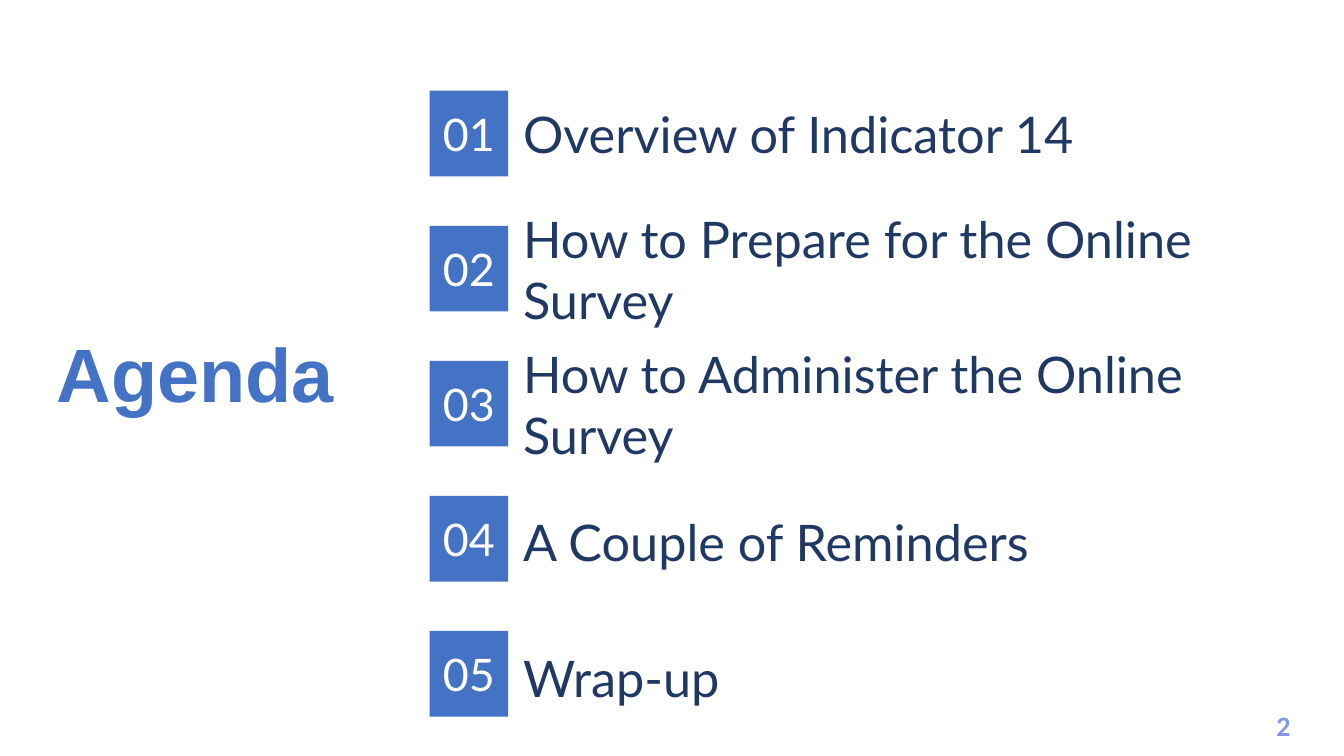
from dataclasses import dataclass

from pptx import Presentation
from pptx.dml.color import RGBColor
from pptx.enum.shapes import MSO_SHAPE
from pptx.enum.text import MSO_ANCHOR, PP_ALIGN
from pptx.util import Emu, Pt

RECTANGLE = MSO_SHAPE.RECTANGLE
MIDDLE, TOP = MSO_ANCHOR.MIDDLE, MSO_ANCHOR.TOP
LEFT, CENTER = PP_ALIGN.LEFT, PP_ALIGN.CENTER
TITLE_ONLY = 5
EMU_PER_PX = 9144  # 100 px to the inch


@dataclass(frozen=True)
class Theme:
    accent: str = "4472C4"
    topic: str = "203864"
    light: str = "FFFFFF"
    page: str = "8397E7"
    title_font: str = "Arial"
    body_font: str = "Lato"
    page_font: str = "Calibri"
    title_size: int = 54
    number_size: int = 32
    topic_size: int = 36
    page_size: int = 20


THEME = Theme()

# Each topic with the px its text sits below the middle of its number
TOPICS = [
    ("Overview of Indicator 14", 0),
    ("How to Prepare for the Online Survey", 0),
    ("How to Administer the Online Survey", 0),
    ("A Couple of Reminders", 3),
    ("Wrap-up", 3),
]


def px(length):
    return Emu(length * EMU_PER_PX)


def write(shape, text, font, size, color, align=LEFT, anchor=MIDDLE, bold=False):
    frame = shape.text_frame
    frame.text = text
    frame.word_wrap = True
    frame.vertical_anchor = anchor
    paragraph = frame.paragraphs[0]
    paragraph.alignment = align
    paragraph.font.name = font
    paragraph.font.size = Pt(size)
    paragraph.font.bold = bold
    paragraph.font.color.rgb = RGBColor.from_string(color)
    return paragraph


def add_title(slide, left, top, width, height):
    title = slide.shapes.title
    title.left, title.top = px(left), px(top)
    title.width, title.height = px(width), px(height)
    paragraph = write(title, "Agenda", THEME.title_font, THEME.title_size,
                      THEME.accent, bold=True)
    paragraph.line_spacing = 0.9


def add_agenda_row(slide, number, topic, drop, left, top, width, height):
    number_width, gap = 78, 5
    square = slide.shapes.add_shape(RECTANGLE, px(left), px(top),
                                    px(number_width), px(height))
    square.shadow.inherit = False
    square.fill.solid()
    square.fill.fore_color.rgb = RGBColor.from_string(THEME.accent)
    square.line.fill.background()
    write(square, f"{number:02}", THEME.body_font, THEME.number_size,
          THEME.light, CENTER)

    indent = number_width + gap
    label = slide.shapes.add_textbox(px(left + indent), px(top + drop),
                                     px(width - indent), px(height))
    write(label, topic, THEME.body_font, THEME.topic_size, THEME.topic)


def add_agenda(slide, left, top, width, height):
    row_height = 85
    pitch = (height - row_height) // (len(TOPICS) - 1)
    for index, (topic, drop) in enumerate(TOPICS):
        add_agenda_row(slide, index + 1, topic, drop,
                       left, top + index * pitch, width, row_height)


def add_page_number(slide, left, top, width, height):
    box = slide.shapes.add_textbox(px(left), px(top), px(width), px(height))
    write(box, "2", THEME.page_font, THEME.page_size, THEME.page,
          CENTER, TOP, bold=True)


def main():
    presentation = Presentation()
    presentation.slide_width, presentation.slide_height = px(1333), px(750)
    slide = presentation.slides.add_slide(presentation.slide_layouts[TITLE_ONLY])
    add_page_number(slide, 1242, 698, 62, 44)
    add_title(slide, 46, 318, 307, 114)
    add_agenda(slide, 426, 90, 851, 621)
    presentation.save("out.pptx")


if __name__ == "__main__":
    main()
